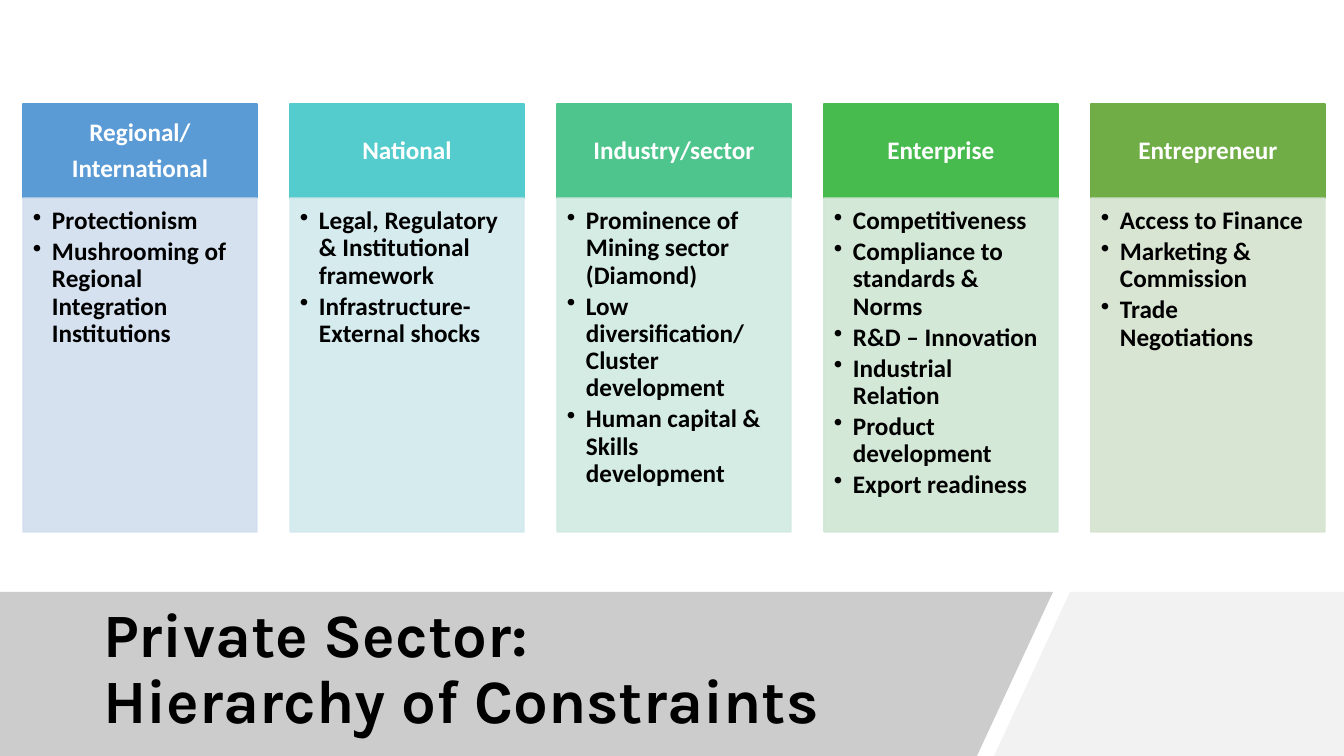
import pptx
import pptx.util
import pptx.dml.color
import pptx.enum.shapes
import pptx.enum.text
import pptx.oxml
import pptx.oxml.ns

RGBColor = pptx.dml.color.RGBColor
PP_ALIGN = pptx.enum.text.PP_ALIGN
MSO_ANCHOR = pptx.enum.text.MSO_ANCHOR

PX = 12192000 / 1344  # EMU in one px
WHITE = RGBColor(0xFF, 0xFF, 0xFF)
BLACK = RGBColor(0x00, 0x00, 0x00)
BAND_GRAY = RGBColor(0x80, 0x80, 0x80)
PANEL_GRAY = RGBColor(0xF2, 0xF2, 0xF2)
BLUE, PALE_BLUE = RGBColor(0x5B, 0x9B, 0xD5), RGBColor(0xD2, 0xDE, 0xEF)
TEAL, PALE_TEAL = RGBColor(0x54, 0xCC, 0xCD), RGBColor(0xD1, 0xE9, 0xED)
MINT, PALE_MINT = RGBColor(0x4D, 0xC5, 0x8D), RGBColor(0xD0, 0xEA, 0xE1)
GREEN, PALE_GREEN = RGBColor(0x48, 0xBB, 0x4F), RGBColor(0xD0, 0xE6, 0xD4)
OLIVE, PALE_OLIVE = RGBColor(0x70, 0xAD, 0x47), RGBColor(0xD5, 0xE3, 0xCF)

LEFT, STEP, WIDTH = 23, 267, 234
HEADER_TOP, HEADER_HEIGHT, LIST_HEIGHT = 104, 94, 334
INDENT = 19

COLUMNS = [
    (BLUE, PALE_BLUE, ["Regional/", "International"],
     ["Protectionism", "Mushrooming of Regional Integration Institutions"]),
    (TEAL, PALE_TEAL, ["National"],
     ["Legal, Regulatory & Institutional framework",
      "Infrastructure-External shocks"]),
    (MINT, PALE_MINT, ["Industry/sector"],
     ["Prominence of Mining sector (Diamond)",
      "Low diversification/ Cluster development",
      "Human capital & Skills development"]),
    (GREEN, PALE_GREEN, ["Enterprise"],
     ["Competitiveness", "Compliance to standards & Norms",
      "R&D – Innovation", "Industrial Relation",
      "Product development", "Export readiness"]),
    (OLIVE, PALE_OLIVE, ["Entrepreneur"],
     ["Access to Finance", "Marketing & Commission", "Trade Negotiations"]),
]

HEADER_FORMAT = {"insets": (14, 8, 14, 8), "anchor": MSO_ANCHOR.MIDDLE,
                 "alignment": PP_ALIGN.CENTER, "space_after": 6,
                 "color": WHITE, "opacity": 100, "bullet": False}
LIST_FORMAT = {"insets": (10, 10, 14, 16), "anchor": MSO_ANCHOR.TOP,
               "alignment": PP_ALIGN.LEFT, "space_after": 2.7,
               "color": BLACK, "opacity": 90, "bullet": True}


def px(length):
    return pptx.util.Emu(round(length * PX))


def set_opacity(shape, percent):
    for color in shape._element.spPr.iter(pptx.oxml.ns.qn("a:srgbClr")):
        color.append(pptx.oxml.parse_xml(
            f'<a:alpha {pptx.oxml.ns.nsdecls("a")} val="{percent * 1000}"/>'))


presentation = pptx.Presentation()
presentation.slide_width, presentation.slide_height = px(1344), px(756)
slide = presentation.slides.add_slide(presentation.slide_layouts[5])

# Slanted panel and title band along the bottom
for points, color, opacity in [
    ([(1070, 592), (1344, 592), (1344, 756), (994, 756)], PANEL_GRAY, 100),
    ([(-2, 592), (1053, 592), (977, 756), (-2, 756)], BAND_GRAY, 40),
]:
    builder = slide.shapes.build_freeform(*points[0], scale=PX)
    builder.add_line_segments(points[1:], close=True)
    panel = builder.convert_to_shape()
    panel.shadow.inherit = False
    panel.fill.solid()
    panel.fill.fore_color.rgb = color
    panel.line.fill.background()
    set_opacity(panel, opacity)

# Title, brought in front of the band
title = slide.shapes.title
slide.shapes._spTree.append(title._element)
for name, value in {"left": 93, "top": 610, "width": 890, "height": 121}.items():
    setattr(title, name, px(value))
title.text_frame.word_wrap = True
title.text_frame.vertical_anchor = MSO_ANCHOR.MIDDLE
title.text_frame.text = "Private Sector: \vHierarchy of Constraints"
paragraph = title.text_frame.paragraphs[0]
paragraph.alignment = PP_ALIGN.LEFT
paragraph.line_spacing = 0.9
for run in paragraph.runs:
    for name, value in {"name": "Karla", "size": pptx.util.Pt(44), "bold": True}.items():
        setattr(run.font, name, value)
    run.font.color.rgb = BLACK

# Columns: a header above a bulleted list
for column, (header_color, list_color, heading, items) in enumerate(COLUMNS):
    for top, height, fill_color, lines, style in [
        (HEADER_TOP, HEADER_HEIGHT, header_color, heading, HEADER_FORMAT),
        (HEADER_TOP + HEADER_HEIGHT, LIST_HEIGHT, list_color, items, LIST_FORMAT),
    ]:
        box = slide.shapes.add_shape(
            pptx.enum.shapes.MSO_SHAPE.RECTANGLE,
            px(LEFT + column * STEP), px(top), px(WIDTH), px(height))
        box.shadow.inherit = False
        box.fill.solid()
        box.fill.fore_color.rgb = fill_color
        box.line.color.rgb = fill_color
        box.line.width = pptx.util.Pt(1)
        set_opacity(box, style["opacity"])

        frame = box.text_frame
        frame.word_wrap = True
        frame.vertical_anchor = style["anchor"]
        for side, inset in zip(("left", "top", "right", "bottom"), style["insets"]):
            setattr(frame, f"margin_{side}", px(inset))
        frame.text = "\n".join(lines)
        for paragraph in frame.paragraphs:
            for name, value in {"alignment": style["alignment"], "line_spacing": 0.9,
                                "space_after": pptx.util.Pt(style["space_after"])}.items():
                setattr(paragraph, name, value)
            font = paragraph.runs[0].font
            for name, value in {"name": "Calibri", "size": pptx.util.Pt(18),
                                "bold": True}.items():
                setattr(font, name, value)
            font.color.rgb = style["color"]
            if style["bullet"]:
                properties = paragraph._p.get_or_add_pPr()
                properties.set("marL", str(px(INDENT)))
                properties.set("indent", str(-px(INDENT)))
                properties.append(pptx.oxml.parse_xml(
                    f'<a:buChar {pptx.oxml.ns.nsdecls("a")} char="•"/>'))

presentation.save("out.pptx")
